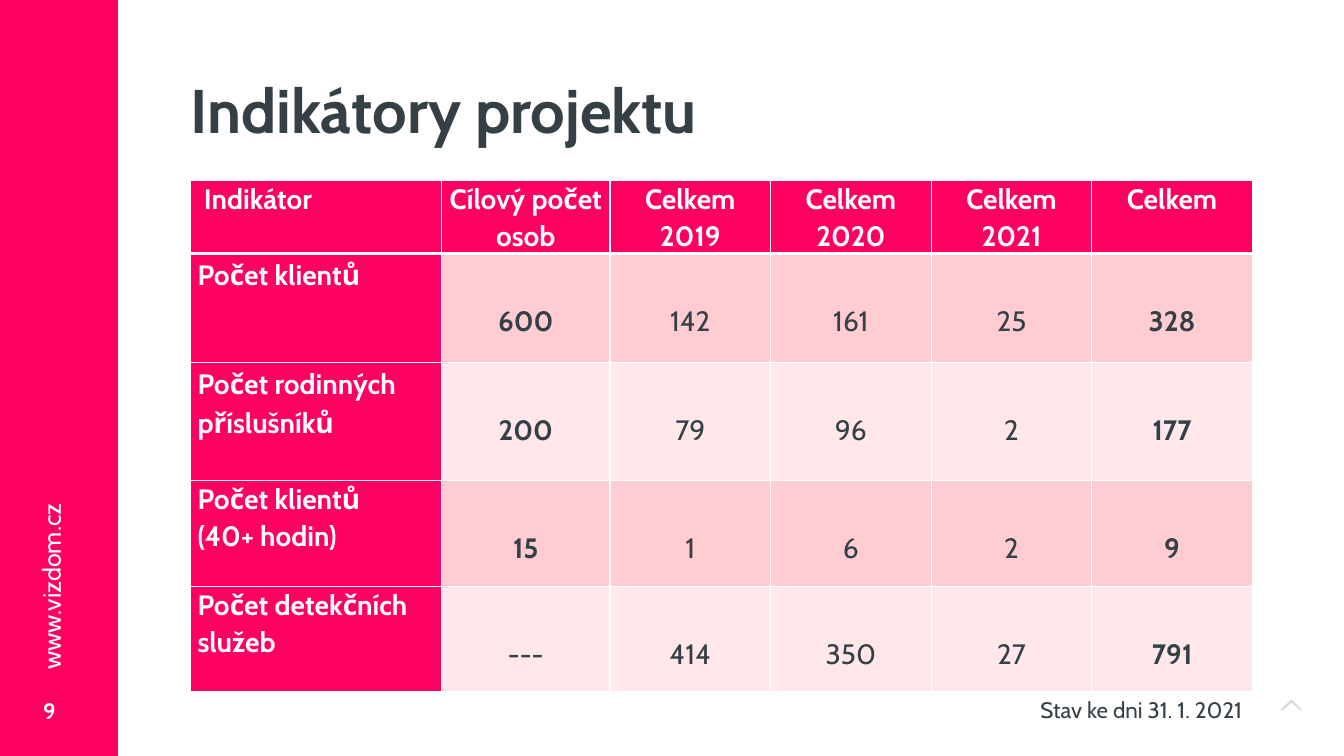
"""Build the project indicators slide."""
from dataclasses import dataclass

from lxml import etree
from pptx import Presentation
from pptx import util as u
from pptx.dml.color import RGBColor
from pptx.enum import shapes, text
from pptx.oxml.ns import qn

FONT = "Cabin"
PINK = RGBColor(0xFE, 0x00, 0x61)
ROSE = RGBColor(0xFF, 0xCC, 0xD2)
BLUSH = RGBColor(0xFF, 0xE7, 0xEA)
SLATE = RGBColor(0x34, 0x40, 0x46)
WHITE = RGBColor(0xFF, 0xFF, 0xFF)
LEFT, CENTER, RIGHT = text.PP_ALIGN.LEFT, text.PP_ALIGN.CENTER, text.PP_ALIGN.RIGHT
MIDDLE, TOP = text.MSO_ANCHOR.MIDDLE, text.MSO_ANCHOR.TOP

SLIDE_WIDTH, SLIDE_HEIGHT = u.Inches(13.33), u.Inches(7.5)
CONTENT_LEFT, CONTENT_WIDTH = 14.18, 79
COLUMN_WIDTHS = [18.68, 12.53] + [11.95] * 4
HEADER_HEIGHT = 9.47
HEADERS = [" Indikátor", "Cílový počet osob", "Celkem 2019", "Celkem 2020", "Celkem 2021", "Celkem"]
CHEVRON = [(96.1, 92.53), (96.85, 93.87), (96.77, 94), (96.1, 92.93), (95.42, 94), (95.27, 93.87)]


@dataclass
class Style:
    """Look of a text span and its paragraph."""
    size: float = 20
    color: RGBColor = SLATE
    bold: bool = False
    align: text.PP_ALIGN = LEFT
    spacing: float = 1


@dataclass
class Label:
    """Text box placed by percentages of the slide."""
    content: str
    left: float
    top: float
    width: float
    height: float
    style: Style
    anchor: text.MSO_ANCHOR = TOP
    rotation: float = 0


@dataclass
class Indicator:
    """Table row with its label lines and values."""
    lines: list[str]
    values: list[str]
    height: float
    spacing: float = 1.07


LABELS = [
    Label("9", 2.48, 90, 3.75, 8, Style(16, WHITE, True), MIDDLE),
    Label("www.vizdom.cz", -5.1, 71.33, 17.85, 5.47, Style(18, WHITE), rotation=270),
    Label("Stav ke dni 31. 1. 2021", 62.64, 91.47, 30.53, 4.93, Style(16, align=RIGHT)),
]
INDICATORS = [
    Indicator(["Počet klientů"], ["600", "142", "161", "25", "328"], 14.4, 1.15),
    Indicator(["Počet rodinných příslušníků"], ["200", "79", "96", "2", "177"], 15.6, 1.15),
    Indicator(["Počet klientů", "(40+ hodin)"], ["15", "1", "6", "2", "9"], 14),
    Indicator(["Počet detekčních služeb"], ["---", "414", "350", "27", "791"], 14),
]


def across(percent: float) -> int:
    """Return a share of the slide's width."""
    return round(SLIDE_WIDTH * percent / 100)


def down(percent: float) -> int:
    """Return a share of the slide's height."""
    return round(SLIDE_HEIGHT * percent / 100)


def place(left: float, top: float, width: float, height: float) -> tuple[int, int, int, int]:
    """Return a frame in slide units."""
    return across(left), down(top), across(width), down(height)


def write(frame, lines: list[str], style: Style) -> None:
    """Write one paragraph per line into a text frame."""
    frame.word_wrap = True
    for index, line in enumerate(lines):
        para = frame.add_paragraph() if index else frame.paragraphs[0]
        para.alignment, para.line_spacing = style.align, style.spacing
        span = para.add_run()
        span.text = line
        span.font.name, span.font.size = FONT, u.Pt(style.size)
        span.font.bold, span.font.color.rgb = style.bold, style.color


def add_sidebar(page) -> None:
    """Draw the pink band along the left edge."""
    band = page.shapes.add_shape(shapes.MSO_SHAPE.RECTANGLE, *place(0, 0, 8.78, 100))
    band.shadow.inherit = False
    band.fill.solid()
    band.fill.fore_color.rgb = PINK
    band.line.fill.background()


def add_chevron(page) -> None:
    """Draw the faint upward chevron."""
    points = [(across(x), down(y)) for x, y in CHEVRON]
    builder = page.shapes.build_freeform(*points[0])
    builder.add_line_segments(points[1:], close=True)
    chevron = builder.convert_to_shape()
    chevron.shadow.inherit = False
    chevron.fill.solid()
    chevron.fill.fore_color.rgb = SLATE
    color = chevron.fill._xPr.find(qn("a:solidFill"))[0]
    etree.SubElement(color, qn("a:alpha"), val="20000")
    chevron.line.fill.background()


def add_label(page, label: Label) -> None:
    """Draw one text box."""
    box = page.shapes.add_textbox(*place(label.left, label.top, label.width, label.height))
    box.rotation = label.rotation
    box.text_frame.vertical_anchor = label.anchor
    write(box.text_frame, [label.content], label.style)


def format_title(page) -> None:
    """Move, format and fill the title placeholder."""
    title = page.shapes.title
    title.left, title.top, title.width, title.height = place(CONTENT_LEFT, 5.33, CONTENT_WIDTH, 19.33)
    frame = title.text_frame
    frame.auto_size = text.MSO_AUTO_SIZE.NONE
    frame.vertical_anchor = MIDDLE
    frame.margin_left = frame.margin_right = 0
    write(frame, ["Indikátory projektu"], Style(44, bold=True, spacing=0.9))


def fill_cell(cell, lines: list[str], style: Style, fill: RGBColor, bottom: float = 1) -> None:
    """Fill a table cell and draw its white borders."""
    cell.margin_left = cell.margin_right = u.Inches(0.07)
    cell.margin_top = cell.margin_bottom = 0
    cell.fill.solid()
    cell.fill.fore_color.rgb = fill
    write(cell.text_frame, lines, style)
    properties = cell._tc.get_or_add_tcPr()
    for index, (side, points) in enumerate([("L", 1), ("R", 1), ("T", 1), ("B", bottom)]):
        border = etree.Element(qn(f"a:ln{side}"), w=str(u.Pt(points)))
        paint = etree.SubElement(border, qn("a:solidFill"))
        etree.SubElement(paint, qn("a:srgbClr"), val=str(WHITE))
        properties.insert(index, border)


def add_indicators(page) -> None:
    """Draw the table of indicators."""
    heights = [HEADER_HEIGHT] + [indicator.height for indicator in INDICATORS]
    frame = page.shapes.add_table(len(heights), len(HEADERS),
                                  *place(CONTENT_LEFT, 23.87, CONTENT_WIDTH, sum(heights)))
    table = frame.table
    table.horz_banding = False
    for column, width in zip(table.columns, COLUMN_WIDTHS):
        column.width = across(width)
    for row, height in zip(table.rows, heights):
        row.height = down(height)
    for index, header in enumerate(HEADERS):
        style = Style(color=WHITE, bold=True, align=CENTER if index else LEFT, spacing=1.07)
        fill_cell(table.cell(0, index), [header], style, PINK, bottom=3)
    for row, indicator in enumerate(INDICATORS, 1):
        style = Style(color=WHITE, bold=True, spacing=indicator.spacing)
        fill_cell(table.cell(row, 0), indicator.lines, style, PINK, bottom=1)
        for column, value in enumerate(indicator.values, 1):
            bold = column in (1, len(indicator.values)) and value.isdigit()
            style = Style(bold=bold, align=CENTER, spacing=2.5)
            fill_cell(table.cell(row, column), [value], style, ROSE if row % 2 else BLUSH)


def main() -> None:
    """Build and save the deck."""
    deck = Presentation()
    deck.slide_width, deck.slide_height = SLIDE_WIDTH, SLIDE_HEIGHT
    page = deck.slides.add_slide(deck.slide_layouts[5])
    add_chevron(page)
    add_sidebar(page)
    format_title(page)
    add_indicators(page)
    for label in LABELS:
        add_label(page, label)
    deck.save("out.pptx")


if __name__ == "__main__":
    main()
